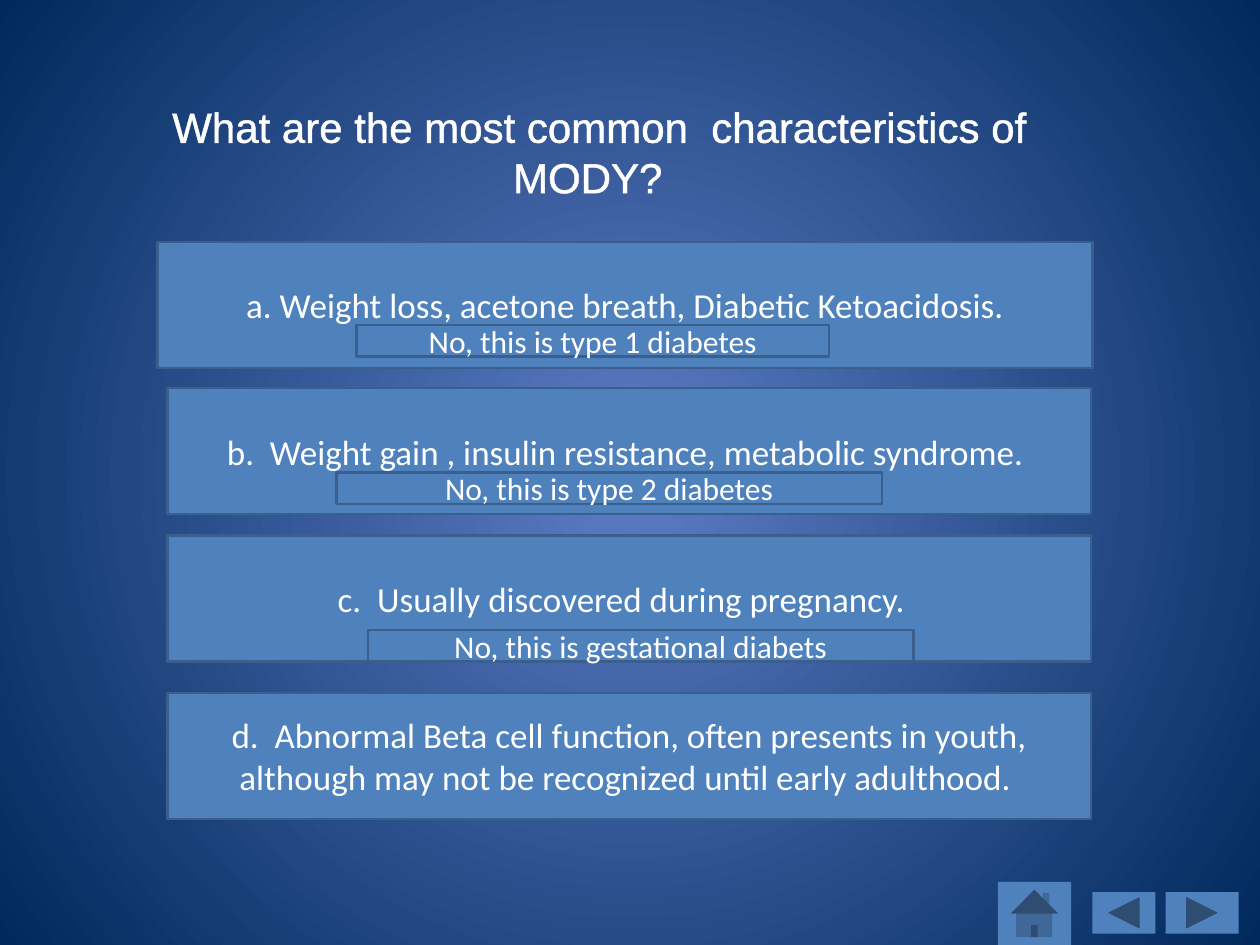
from dataclasses import dataclass

import pptx
import pptx.dml.color
import pptx.enum.shapes
import pptx.enum.text
import pptx.oxml
import pptx.oxml.ns
import pptx.util
from pptx.util import Inches

SHAPES = pptx.enum.shapes.MSO_SHAPE
ANCHOR = pptx.enum.text.MSO_ANCHOR
NS = pptx.oxml.ns.nsdecls("a")


def rgb(code):
    return pptx.dml.color.RGBColor.from_string(code)


@dataclass(frozen=True)
class Theme:
    glow: str = "5E7CC5"
    edge: str = "00295C"
    panel: str = "4F81BD"
    border: str = "3A5F8C"
    text: str = "FFFFFF"
    heading_font: str = "Arial"
    body_font: str = "Calibri"
    heading_size: int = 24
    answer_size: int = 20
    feedback_size: int = 18
    border_width: float = 1.5
    heading_outline: float = 1.45


THEME = Theme()

# Answer, box, feedback, feedback box relative to the answer box
ANSWERS = [
    ("a. Weight loss, acetone breath, Diabetic Ketoacidosis.", (1.25, 1.92, 7.42, 1),
     "No, this is type 1 diabetes", (1.58, 0.66, 3.75, 0.25)),
    ("b.  Weight gain , insulin resistance, metabolic syndrome. ", (1.33, 3.08, 7.33, 1),
     "No, this is type 2 diabetes", (1.34, 0.67, 4.33, 0.25)),
    ("c.  Usually discovered during pregnancy.  ", (1.33, 4.25, 7.33, 1),
     "No, this is gestational diabets", (1.59, 0.75, 4.33, 0.25)),
    ("d.  Abnormal Beta cell function, often presents in youth, although may not be "
     "recognized until early adulthood. ", (1.33, 5.5, 7.33, 1), None, None),
]


def write(shape, text, size, font=THEME.body_font, anchor=ANCHOR.MIDDLE):
    """Fill a shape with one centred run and return the run."""
    frame = shape.text_frame
    frame.word_wrap = True
    frame.vertical_anchor = anchor
    paragraph = frame.paragraphs[0]
    paragraph.alignment = pptx.enum.text.PP_ALIGN.CENTER
    run = paragraph.add_run()
    run.text = text
    run.font.name = font
    run.font.size = pptx.util.Pt(size)
    run.font.color.rgb = rgb(THEME.text)
    return run


def add_panel(slide, box, kind=SHAPES.RECTANGLE, bordered=True):
    panel = slide.shapes.add_shape(kind, *map(Inches, box))
    panel.shadow.inherit = False
    panel.fill.solid()
    panel.fill.fore_color.rgb = rgb(THEME.panel)
    if bordered:
        panel.line.color.rgb = rgb(THEME.border)
        panel.line.width = pptx.util.Pt(THEME.border_width)
    else:
        panel.line.fill.background()
    return panel


def paint_background(slide):
    """Radial gradient, from a glow in the centre to dark corners."""
    fill = slide.background.fill
    fill.gradient()
    for stop, color in zip(fill.gradient_stops, (THEME.glow, THEME.edge)):
        stop.color.rgb = rgb(color)
    linear = next(slide.element.iter(pptx.oxml.ns.qn("a:lin")))
    radial = pptx.oxml.parse_xml(
        f'<a:path {NS} path="circle">'
        '<a:fillToRect l="50000" t="50000" r="50000" b="50000"/></a:path>')
    linear.getparent().replace(linear, radial)


def add_question(slide, box):
    title = slide.shapes.title
    title.left, title.top, title.width, title.height = map(Inches, box)
    run = write(title, "  What are the most common  characteristics of MODY?",
                THEME.heading_size, font=THEME.heading_font, anchor=ANCHOR.TOP)
    title.text_frame.auto_size = pptx.enum.text.MSO_AUTO_SIZE.SHAPE_TO_FIT_TEXT
    outline = pptx.oxml.parse_xml(
        f'<a:ln {NS} w="{pptx.util.Pt(THEME.heading_outline)}"><a:solidFill>'
        f'<a:srgbClr val="{THEME.text}"/></a:solidFill></a:ln>')
    run.font._element.insert(0, outline)


def add_answer(slide, box, answer):
    write(add_panel(slide, box), answer, THEME.answer_size)


def add_feedback(slide, answer_box, offset_box, feedback):
    left, top, width, height = offset_box
    box = (answer_box[0] + left, answer_box[1] + top, width, height)
    write(add_panel(slide, box), feedback, THEME.feedback_size)


def add_navigation(slide, box):
    left, top, _, height = box
    buttons = [
        (SHAPES.ACTION_BUTTON_BACK_OR_PREVIOUS, 0.75, 0.08, 0.5, 0.33),
        (SHAPES.ACTION_BUTTON_FORWARD_OR_NEXT, 1.33, 0.08, 0.58, 0.33),
        (SHAPES.ACTION_BUTTON_HOME, 0, 0, 0.58, height),
    ]
    for kind, x, y, w, h in buttons:
        add_panel(slide, (left + x, top + y, w, h), kind, bordered=False)


def main():
    deck = pptx.Presentation()
    deck.slide_width, deck.slide_height = Inches(10), Inches(7.5)
    slide = deck.slides.add_slide(deck.slide_layouts.get_by_name("Title Only"))
    paint_background(slide)
    add_navigation(slide, (7.92, 7, 1.91, 0.5))
    add_question(slide, (0.5, 0.75, 8.33, 0.91))
    for answer, box, _, _ in ANSWERS:
        add_answer(slide, box, answer)
    for _, box, feedback, offset_box in ANSWERS:
        if feedback:
            add_feedback(slide, box, offset_box, feedback)
    deck.save("out.pptx")


if __name__ == "__main__":
    main()
